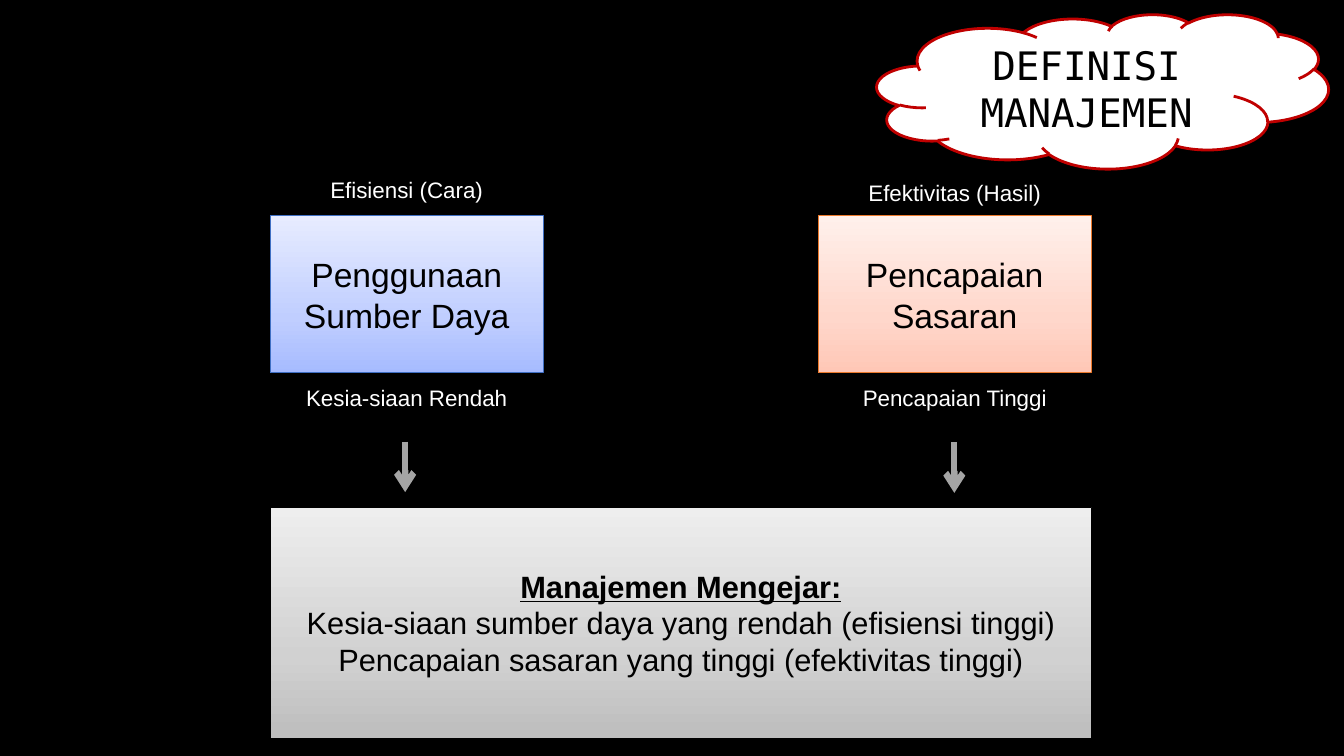
from copy import deepcopy

from pptx import Presentation
from pptx.dml.color import RGBColor
from pptx.enum.shapes import MSO_CONNECTOR as Link, MSO_SHAPE as Form
from pptx.enum.text import MSO_ANCHOR as Anchor, PP_ALIGN as Align
from pptx.oxml.ns import qn
from pptx.oxml.xmlchemy import OxmlElement as Node
from pptx.util import Cm, Pt

SANS = {"name": "Arial"}
MONO = {"name": "DejaVu Sans Mono"}
HEAD = {"bold": True, "underline": True}


def paint(tint, code):
    """Set a colour format from a hex string."""
    tint.rgb = RGBColor.from_string(code)


def assign(item, style):
    """Set every attribute named in a dict."""
    for key, value in style.items():
        setattr(item, key, value)


def write(shape, lines, size, code, face=SANS, first=None):
    """Fill a shape with centred lines, the first with its own style."""
    frame = shape.text_frame
    assign(frame, {"word_wrap": True, "vertical_anchor": Anchor.MIDDLE})
    frame.text = "\n".join(lines)
    for row, para in enumerate(frame.paragraphs):
        para.alignment = Align.CENTER
        font = para.runs[0].font
        assign(font, {"size": Pt(size), **face, **((first or {}) if row == 0 else {})})
        paint(font.color, code)


def add_form(shapes, form, area, edge, width):
    """Add a preset shape with a plain outline."""
    shape = shapes.add_shape(form, *map(Cm, area))
    shape.shadow.inherit = False
    paint(shape.line.color, edge)
    shape.line.width = Pt(width)
    return shape


def add_box(shapes, area, edge, tints):
    """Add a rectangle shaded upward through three tints."""
    box = add_form(shapes, Form.RECTANGLE, area, edge, 0.75)
    box.fill.gradient()
    box.fill.gradient_angle = 90
    stops = next(box._element.spPr.iter(qn("a:gsLst")))
    stops.insert(1, deepcopy(stops[0]))
    for stop, spot, tint in zip(box.fill.gradient_stops, (0, 0.35, 1), tints):
        stop.position = spot
        paint(stop.color, tint)
    return box


def add_label(shapes, left, top, text):
    """Add a white caption as wide as a panel."""
    label = shapes.add_textbox(Cm(left), Cm(top), Cm(6.88), Cm(1.22))
    write(label, [text], 16, "FFFFFF")


def add_panel(slide, left, edge, tints, text, over, under):
    """Add a grouped box with a caption above and below."""
    shapes = slide.shapes.add_group_shape().shapes
    box = add_box(shapes, (left, 5.44, 6.88, 3.96), edge, tints)
    write(box, [text], 24, "000000")
    for top, note in (under, over):
        add_label(shapes, left, top, note)


def add_arrow(slide, left, top):
    """Add a thick grey arrow pointing down."""
    arrow = slide.shapes.add_connector(
        Link.STRAIGHT, Cm(left), Cm(top), Cm(left), Cm(top + 1.27))
    paint(arrow.line.color, "A5A5A5")
    arrow.line.width = Pt(4.5)
    tail = Node("a:tailEnd")
    tail.set("type", "arrow")
    arrow.line._get_or_add_ln().append(tail)
    arrow._element.spPr.append(Node("a:effectLst"))


def main():
    """Build and save the slide."""
    deck = Presentation()
    assign(deck, {"slide_width": Cm(33.87), "slide_height": Cm(19.05)})
    slide = deck.slides.add_slide(deck.slide_layouts[6])
    back = slide.background.fill
    back.solid()
    paint(back.fore_color, "000000")

    cloud = add_form(slide.shapes, Form.CLOUD, (22.1, 0.36, 11.38, 3.89), "C00000", 2)
    cloud.fill.solid()
    paint(cloud.fill.fore_color, "FFFFFF")
    write(cloud, ["DEFINISI MANAJEMEN"], 28, "000000", MONO)

    goal = add_box(slide.shapes, (6.81, 12.78, 20.7, 5.82), "000000",
                   ("BDBDBD", "D1D1D1", "EEEEEE"))
    write(goal, ["Manajemen Mengejar:",
                 "Kesia-siaan sumber daya yang rendah (efisiensi tinggi)",
                 "Pencapaian sasaran yang tinggi (efektivitas tinggi)"],
          22, "000000", first=HEAD)

    add_arrow(slide, 10.21, 11.13)
    add_arrow(slide, 24.05, 11.15)
    add_panel(slide, 6.81, "3F6FC3", ("A6BBFF", "C0CEFF", "E7ECFF"),
              "Penggunaan Sumber Daya",
              (4.17, "Efisiensi (Cara)"), (9.4, "Kesia-siaan Rendah"))
    add_panel(slide, 20.62, "EC792B", ("FFC7B6", "FFD7CB", "FFF0EB"),
              "Pencapaian Sasaran",
              (4.24, "Efektivitas (Hasil)"), (9.42, "Pencapaian Tinggi"))
    deck.save("out.pptx")


if __name__ == "__main__":
    main()
